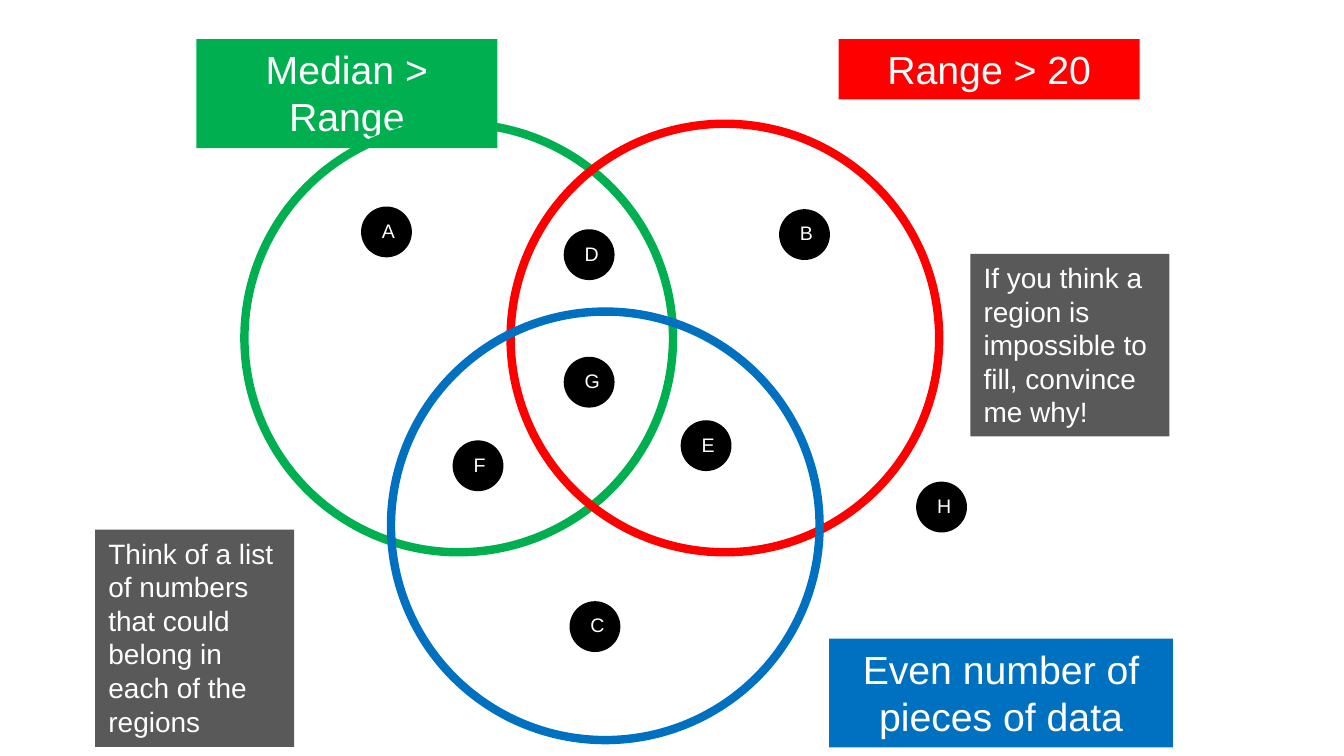
"""Build a three-circle Venn diagram slide about medians, ranges and list sizes."""
from dataclasses import dataclass

from pptx import Presentation
from pptx.dml.color import RGBColor as Rgb
from pptx.enum.shapes import MSO_SHAPE as Kind
from pptx.enum.text import MSO_ANCHOR as Anchor, MSO_AUTO_SIZE as Fit, PP_ALIGN as Align
from pptx.util import Cm, Pt


@dataclass(frozen=True)
class Theme:
    font: str = "Arial"
    green: Rgb = Rgb(0x00, 0xB0, 0x50)
    red: Rgb = Rgb(0xFF, 0x00, 0x00)
    blue: Rgb = Rgb(0x00, 0x70, 0xC0)
    grey: Rgb = Rgb(0x59, 0x59, 0x59)
    black: Rgb = Rgb(0x00, 0x00, 0x00)
    white: Rgb = Rgb(0xFF, 0xFF, 0xFF)
    label: Pt = Pt(21)
    note: Pt = Pt(15)
    letter: Pt = Pt(10.5)
    ring: Pt = Pt(4.5)
    edge: Pt = Pt(2)


THEME = Theme()
RING = 8.1
DISC = 0.89

LABELS = [
    ("Range > 20", THEME.red, (15.85, 0.74, 5.69, 1.14)),
    ("Even number of pieces of data", THEME.blue, (15.67, 12.07, 6.5, 2.06)),
    ("Median > Range", THEME.green, (3.71, 0.74, 5.69, 2.06)),
]
NOTES = [
    ("Think of a list of numbers that could belong in each of the regions",
     (1.8, 10.01, 3.76, 4.11)),
    ("If you think a region is impossible to fill, convince me why!",
     (18.34, 4.8, 3.76, 3.45)),
]
RINGS = [
    (THEME.green, 4.62, 2.34),
    (THEME.red, 9.65, 2.34),
    (THEME.blue, 7.39, 5.89),
]
REGIONS = {
    "A": (6.86, 3.94),
    "B": (14.76, 3.99),
    "C": (10.8, 11.4),
    "D": (10.69, 4.37),
    "E": (12.9, 7.98),
    "F": (8.59, 8.36),
    "G": (10.69, 6.78),
    "H": (17.35, 9.14),
}


def write(shape, text, size, align, wrap=True):
    """Put white text of one size into a shape."""
    frame = shape.text_frame
    frame.text = text
    frame.word_wrap = wrap
    frame.auto_size = Fit.SHAPE_TO_FIT_TEXT
    frame.vertical_anchor = Anchor.TOP
    para = frame.paragraphs[0]
    para.alignment = align
    para.font.name = THEME.font
    para.font.size = size
    para.font.color.rgb = THEME.white


def add_box(slide, text, fill, area, size, align):
    """Add a filled rectangle with text."""
    box = slide.shapes.add_shape(Kind.RECTANGLE, *map(Cm, area))
    box.shadow.inherit = False
    box.fill.solid()
    box.fill.fore_color.rgb = fill
    box.line.fill.background()
    write(box, text, size, align)


def add_round(slide, left, top, width, color, weight):
    """Add an outlined circle and return it."""
    disc = slide.shapes.add_shape(Kind.OVAL, Cm(left), Cm(top), Cm(width), Cm(width))
    disc.shadow.inherit = False
    disc.fill.background()
    disc.line.color.rgb = color
    disc.line.width = weight
    return disc


def add_region(slide, letter, left, top):
    """Add a black disc with its region letter."""
    disc = add_round(slide, left, top, DISC, THEME.black, THEME.edge)
    disc.fill.solid()
    disc.fill.fore_color.rgb = THEME.black
    box = slide.shapes.add_textbox(Cm(left + 0.11), Cm(top + 0.07), Cm(0.69), Cm(0.71))
    write(box, letter, THEME.letter, Align.CENTER, wrap=False)


def main():
    """Draw the slide and save it."""
    deck = Presentation()
    deck.slide_width, deck.slide_height = Cm(25.4), Cm(14.29)
    slide = deck.slides.add_slide(deck.slide_layouts[6])
    for text, fill, area in LABELS:
        add_box(slide, text, fill, area, THEME.label, Align.CENTER)
    for text, area in NOTES:
        add_box(slide, text, THEME.grey, area, THEME.note, Align.LEFT)
    for color, left, top in RINGS:
        add_round(slide, left, top, RING, color, THEME.ring)
    for letter, (left, top) in REGIONS.items():
        add_region(slide, letter, left, top)
    deck.save("out.pptx")


if __name__ == "__main__":
    main()
